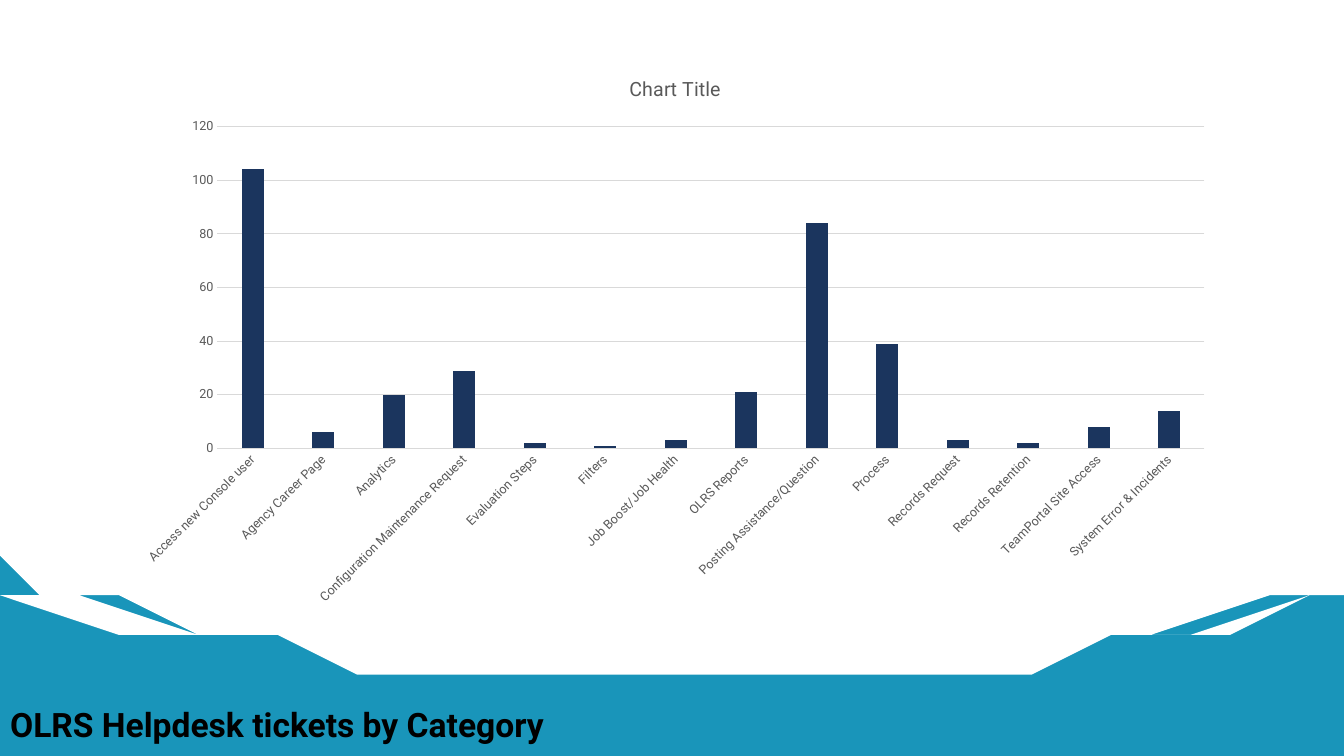
from pptx import Presentation
from pptx.chart.data import CategoryChartData
from pptx.dml.color import RGBColor
from pptx.enum.chart import XL_CHART_TYPE, XL_TICK_MARK
from pptx.enum.shapes import MSO_SHAPE
from pptx.enum.text import MSO_ANCHOR, PP_ALIGN
from pptx.util import Cm, Pt

COLUMNS = XL_CHART_TYPE.COLUMN_CLUSTERED
NO_TICK = XL_TICK_MARK.NONE
RECT = MSO_SHAPE.RECTANGLE
MIDDLE, LEFT = MSO_ANCHOR.MIDDLE, PP_ALIGN.LEFT

FONT = "Roboto"
TEAL = RGBColor(0x19, 0x95, 0xBA)
WHITE = RGBColor(0xFF, 0xFF, 0xFF)
BLACK = RGBColor(0, 0, 0)
NAVY = RGBColor(0x1B, 0x35, 0x5E)
GRAY = RGBColor(0x59, 0x59, 0x59)
GRID = RGBColor(0xD9, 0xD9, 0xD9)

# Content
TITLE = "OLRS Helpdesk tickets by Category"
CHART_TITLE = "Chart Title"
TICKETS = {
    "Access new Console user": 104,
    "Agency Career Page": 6,
    "Analytics": 20,
    "Configuration Maintenance Request": 29,
    "Evaluation Steps": 2,
    "Filters": 1,
    "Job Boost/Job Health": 3,
    "OLRS Reports": 21,
    "Posting Assistance/Question": 84,
    "Process": 39,
    "Records Request": 3,
    "Records Retention": 2,
    "TeamPortal Site Access": 8,
    "System Error & Incidents": 14,
}

# Outline of the white area, in cm, clockwise from the top left
TOP = [(0, 0), (33.87, 0)]
RIGHT_SLIVER = [
    (33.87, 14.61), (33.5, 14.71), (32.44, 15.01), (28.96, 15.8),
    (26.19, 16.28), (23.5, 16.64), (21.44, 16.87), (19.3, 17.04),
    (18.87, 17.09), (19.13, 17.07), (21.06, 16.99), (23.95, 16.74),
    (26.34, 16.46), (29.51, 15.93), (31.44, 15.51), (33.32, 15.01),
    (33.87, 14.86),
]
BOTTOM_CURVE = [
    (33.87, 15.01), (32.87, 15.29), (30.38, 15.9), (27.74, 16.41),
    (25.53, 16.71), (23.83, 16.92), (21.84, 17.09), (19.25, 17.22),
    (17.98, 17.27), (16.61, 17.27), (14.63, 17.17), (12.07, 16.99),
    (9.37, 16.71), (6.55, 16.38), (3.43, 15.9), (0.18, 15.24), (0, 15.19),
]
LEFT_SLIVER = [
    (0, 15.04), (0.2, 15.09), (1.68, 15.42), (4.93, 16), (7.26, 16.33),
    (7.16, 16.31), (5.12, 15.88), (3.1, 15.37), (1.17, 14.81), (0, 14.43),
]


def add_text(tf, text, **fmt):
    p = tf.paragraphs[0]
    p.alignment = fmt.get("align")
    r = p.add_run()
    r.text = text
    set_font(r.font, **fmt)


def set_font(font, size=10, color=BLACK, bold=False, align=None):
    font.name, font.size, font.bold = FONT, Pt(size), bold
    font.color.rgb = color


def paint(shape, color):
    shape.shadow.inherit = False
    shape.fill.solid()
    shape.fill.fore_color.rgb = color
    shape.line.fill.background()


def set_line(line, color):
    line.color.rgb = color
    line.width = Pt(0.75)


prs = Presentation()
prs.slide_width, prs.slide_height = Cm(33.87), Cm(19.05)
s = prs.slides.add_slide(prs.slide_layouts[5])

# Teal ground and the curved white area over it
paint(s.shapes.add_shape(RECT, 0, 0, prs.slide_width, prs.slide_height), TEAL)
outline = TOP + RIGHT_SLIVER + BOTTOM_CURVE + LEFT_SLIVER
fb = s.shapes.build_freeform(*outline[0], scale=Cm(1))
fb.add_line_segments(outline[1:], close=True)
paint(fb.convert_to_shape(), WHITE)

# Title, brought in front of the ground
title = s.shapes.title
title.left, title.top, title.width, title.height = Cm(0), Cm(17.6), Cm(14.61), Cm(1.28)
tf = title.text_frame
tf.word_wrap = False
tf.vertical_anchor = MIDDLE
add_text(tf, TITLE, size=24, bold=True, align=LEFT)
title._element.getparent().append(title._element)

# Column chart
data = CategoryChartData()
data.categories = list(TICKETS)
data.add_series("Series 1", list(TICKETS.values()))
chart = s.shapes.add_chart(COLUMNS, Cm(3.12), Cm(1.4), Cm(27.79), Cm(14.12), data).chart
set_font(chart.font)
chart.has_legend = False
chart.has_title = True
add_text(chart.chart_title.text_frame, CHART_TITLE, size=14, color=GRAY)

plot = chart.plots[0]
plot.gap_width, plot.overlap = 219, -27
plot.vary_by_categories = False
fill = plot.series[0].format.fill
fill.solid()
fill.fore_color.rgb = NAVY

# Axes, with slanted category labels
cat_axis, val_axis = chart.category_axis, chart.value_axis
for axis in (cat_axis, val_axis):
    axis.major_tick_mark = axis.minor_tick_mark = NO_TICK
    set_font(axis.tick_labels.font, size=9, color=GRAY)
set_line(cat_axis.format.line, GRID)
cat_axis._element.txPr.bodyPr.set("rot", "-2700000")
val_axis.minimum_scale, val_axis.maximum_scale, val_axis.major_unit = 0, 120, 20
val_axis.format.line.fill.background()
set_line(val_axis.major_gridlines.format.line, GRID)

prs.save("out.pptx")
